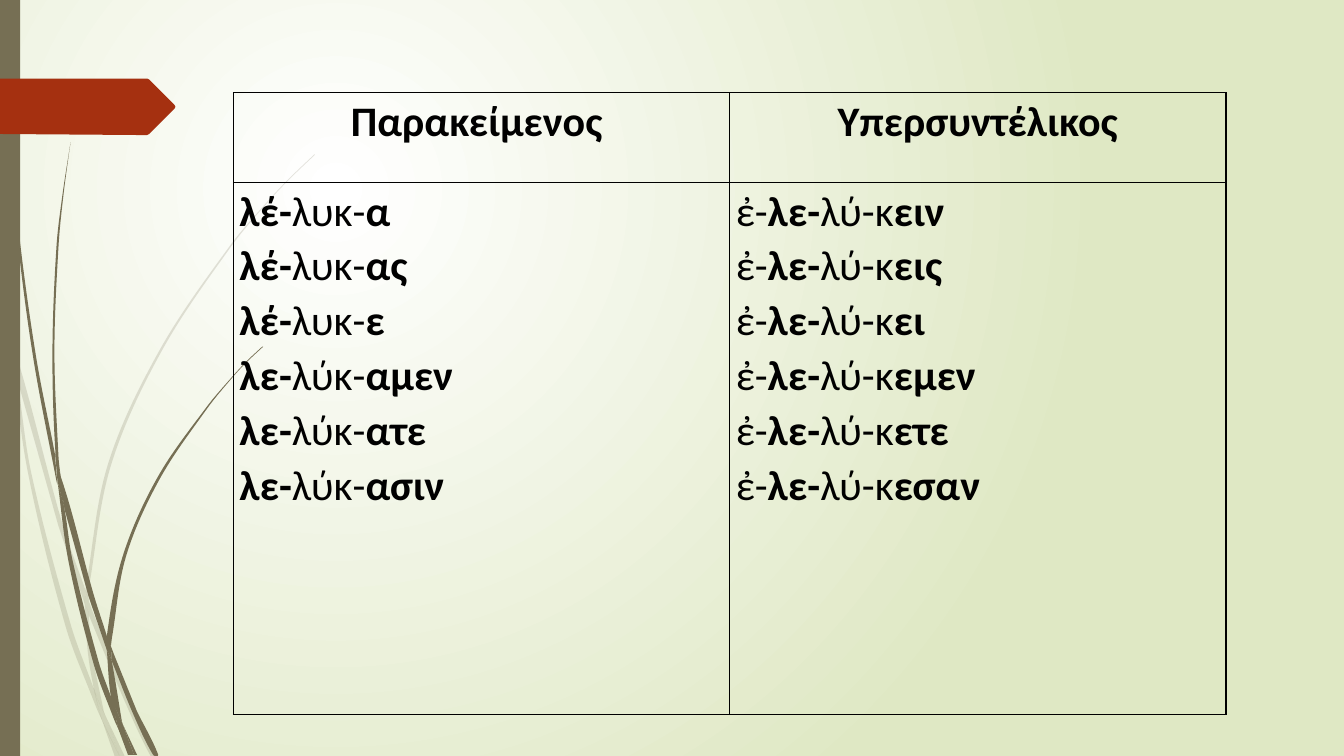
from math import dist
from lxml.etree import SubElement
from pptx import Presentation
from pptx.dml.color import RGBColor
from pptx.enum.shapes import MSO_SHAPE
from pptx.enum.text import PP_ALIGN
from pptx.oxml import parse_xml
from pptx.oxml.ns import nsdecls, qn
from pptx.util import Inches, Pt

OLIVE, RUST, BLACK = "766F54", "A53010", "000000"
WHITE, PALE_GREEN = "FFFFFF", "DFE8C4"


def color(hex_code):
    return RGBColor.from_string(hex_code)


def write(paragraph, text, font="Calibri", size=30, bold=False, ink=BLACK):
    run = paragraph.add_run()
    run.text = text
    run.font.name, run.font.size, run.font.bold = font, Pt(size), bold
    run.font.color.rgb = color(ink)


def handle(before, start, after, end, sign):
    """Bezier handle at start, parallel to before-after, a third of the way to end."""
    reach = sign * dist(start, end) / 3 / (dist(before, after) or 1)
    return tuple(s + (a - b) * reach for b, s, a in zip(before, start, after))


def bend(shape, sides):
    """Turn the straight segments along each side into smooth curves."""
    path = shape._element.find(f".//{qn('a:path')}")
    segments = path.findall(qn("a:lnTo"))
    left, top = shape.left, shape.top
    first = 0
    for side in sides:
        side = [(x - left, y - top) for x, y in side]
        padded = [side[0], *side, side[-1]]
        for a, b, c, d, segment in zip(padded, padded[1:], padded[2:], padded[3:],
                                       segments[first:]):
            curve = SubElement(path, qn("a:cubicBezTo"))
            for x, y in (handle(a, b, c, c, 1), handle(b, c, d, b, -1), c):
                SubElement(curve, qn("a:pt"), x=str(round(x)), y=str(round(y)))
            path.replace(segment, curve)
        first += len(side)


class GridSlide:
    """A slide on a grid of 1333 columns by 750 rows."""
    COLUMNS, ROWS = 1333, 750

    def __init__(self, deck):
        self.slide = deck.slides.add_slide(deck.slide_layouts[6])
        self.shapes = self.slide.shapes
        self.column = deck.slide_width / self.COLUMNS
        self.row = deck.slide_height / self.ROWS

    def box(self, left, top, width, height):
        return (round(left * self.column), round(top * self.row),
                round(width * self.column), round(height * self.row))

    def paint(self, shape, fill, alpha=None):
        shape.shadow.inherit = False
        shape.line.fill.background()
        shape.fill.solid()
        shape.fill.fore_color.rgb = color(fill)
        if alpha:
            tint = shape.fill._xPr.find(f".//{qn('a:srgbClr')}")
            SubElement(tint, qn("a:alpha"), val=str(alpha * 1000))

    def glow(self, inner, outer):
        fill = self.slide.background.fill
        fill.gradient()
        for stop, shade in zip(fill.gradient_stops, (inner, outer)):
            stop.color.rgb = color(shade)
        gradient = self.slide.element.find(f".//{qn('a:gradFill')}")
        gradient.remove(gradient.find(qn("a:lin")))
        gradient.append(parse_xml(
            f'<a:path {nsdecls("a")} path="circle"><a:fillToRect l="50000" '
            't="50000" r="100000" b="100000"/></a:path>'))

    def bar(self, area, fill):
        self.paint(self.shapes.add_shape(MSO_SHAPE.RECTANGLE, *self.box(*area)), fill)

    def outline(self, points, fill, alpha=None):
        builder = self.shapes.build_freeform(*points[0])
        builder.add_line_segments(points[1:], close=True)
        shape = builder.convert_to_shape()
        self.paint(shape, fill, alpha)
        return shape

    def place(self, points):
        return [(round(x * self.column), round(y * self.row)) for x, y in points]

    def blade(self, sides, fill, alpha=None):
        sides = [self.place(side) for side in sides]
        bend(self.outline(sides[0] + sides[1], fill, alpha), sides)

    def table(self, area, row_heights, columns):
        table = self.shapes.add_table(
            len(row_heights), len(columns), *self.box(*area)).table
        table.first_row = table.horz_banding = False
        for row, height in zip(table.rows, row_heights):
            row.height = round(height * self.row)
        for index, (heading, forms) in enumerate(columns):
            self.cell(table.cell(0, index), [[(heading, True)]], PP_ALIGN.CENTER)
            self.cell(table.cell(1, index), forms, PP_ALIGN.LEFT)

    def cell(self, cell, lines, align):
        cell.margin_left = cell.margin_right = Inches(0.06)
        cell.margin_top = cell.margin_bottom = 0
        cell.fill.background()
        properties = cell._tc.get_or_add_tcPr()
        for place, side in enumerate("LRTB"):
            properties.insert(place, parse_xml(
                f'<a:ln{side} {nsdecls("a")} w="{Pt(1)}"><a:solidFill>'
                f'<a:srgbClr val="{BLACK}"/></a:solidFill></a:ln{side}>'))
        frame = cell.text_frame
        for number, parts in enumerate(lines):
            paragraph = frame.add_paragraph() if number else frame.paragraphs[0]
            paragraph.alignment, paragraph.line_spacing = align, 1.07
            for text, bold in parts:
                write(paragraph, text, bold=bold)


# Both sides of each grass blade, in grid columns and rows
FAINT_BLADES = [
    ([(11, 350), (9, 322), (0, 282)], [(0, 299), (10, 344)]),
    ([(58, 522), (84, 599)], [(85, 586), (62, 520), (14, 345), (17, 376)]),
    ([(92, 607), (88, 596)], [(88, 610), (123, 694), (150, 751), (155, 751), (127, 692)]),
    ([(119, 751), (124, 751)], [(105, 711)]),
    ([(93, 683), (70, 619), (31, 469), (17, 376), (11, 350)],
     [(11, 350), (28, 470), (65, 621), (92, 693), (101, 714), (99, 707)]),
    ([(84, 599), (87, 646), (93, 683), (96, 692), (105, 711)],
     [(103, 706), (91, 646), (88, 610), (88, 608)]),
    ([(88, 584), (110, 462), (160, 349), (229, 245), (268, 198), (290, 175), (312, 154)],
     [(312, 153), (289, 175), (268, 197), (228, 244), (158, 348), (107, 461), (85, 584),
      (85, 586), (88, 596)]),
    ([(101, 714), (114, 751)], [(119, 751), (101, 714)]),
    ([(88, 608), (88, 610), (88, 596)], [(85, 586), (84, 599)]),
    ([(96, 692), (93, 683), (99, 707), (101, 714), (119, 751)], [(119, 751), (105, 711)]),
]
DARK_BLADES = [
    ([(7, 110), (17, 233), (33, 355), (56, 477), (57, 481)],
     [(55, 457), (55, 453), (36, 355), (19, 232), (8, 109), (5, 48), (4, 0), (3, 0), (4, 48)]),
    ([(88, 592), (106, 645)], [(106, 633), (106, 631), (93, 590), (60, 472), (64, 505)]),
    ([(113, 649), (110, 641)], [(111, 656), (132, 708), (152, 749), (157, 749), (136, 706)]),
    ([(110, 691), (98, 657), (72, 556), (64, 505), (57, 477)],
     [(57, 477), (68, 557), (93, 659), (111, 708), (117, 722), (116, 717)]),
    ([(60, 472), (58, 453), (54, 349), (58, 245), (63, 193), (70, 141)],
     [(70, 141), (62, 193), (56, 245), (52, 349), (55, 449), (60, 472)]),
    ([(133, 749), (136, 749)], [(122, 719)]),
    ([(57, 477), (64, 505)], [(60, 472), (55, 449), (55, 453)]),
    ([(111, 633), (125, 552), (158, 476), (205, 406), (231, 374), (245, 359), (261, 344)],
     [(260, 344), (245, 358), (231, 373), (204, 405), (156, 474), (122, 551), (106, 631),
      (110, 641)]),
    ([(117, 722), (127, 749)], [(131, 749), (117, 722)]),
    ([(106, 645), (110, 691), (116, 706), (122, 719)],
     [(121, 716), (111, 656), (109, 651)]),
    ([(106, 645), (109, 651), (111, 656)], [(110, 641), (106, 631), (106, 633)]),
    ([(116, 706), (110, 691), (116, 717), (117, 722), (130, 749)],
     [(133, 749), (122, 719)]),
]
TAG = [(173, 108), (148, 133), (146, 134), (136, 134), (0, 133), (0, 78), (136, 78),
       (146, 78), (148, 79), (173, 104), (174, 106)]

# Verb forms, as (text, bold) parts
PERFECT = [[("λέ-", True), ("λυκ-", False), (ending, True)]
           for ending in ("α", "ας", "ε")]
PERFECT += [[("λε-", True), ("λύκ-", False), (ending, True)]
            for ending in ("αμεν", "ατε", "ασιν")]
PLUPERFECT = [[("ἐ-", False), ("λε-", True), ("λύ-κ", False), (ending, True)]
              for ending in ("ειν", "εις", "ει", "εμεν", "ετε", "εσαν")]


def main():
    deck = Presentation()
    deck.slide_width, deck.slide_height = Inches(13.33), Inches(7.5)
    page = GridSlide(deck)

    # Background and grass
    page.glow(WHITE, PALE_GREEN)
    for sides in FAINT_BLADES:
        page.blade(sides, OLIVE, alpha=20)
    for sides in DARK_BLADES:
        page.blade(sides, OLIVE)

    # Side bar and arrow tag
    page.bar((0, 0, 20, 750), OLIVE)
    page.outline(page.place(TAG), RUST)

    # Conjugation table
    page.table((231.5, 92, 984.5, 617), (89, 528),
               [("Παρακείμενος ", PERFECT), ("Υπερσυντέλικος", PLUPERFECT)])
    deck.save("out.pptx")


if __name__ == "__main__":
    main()
